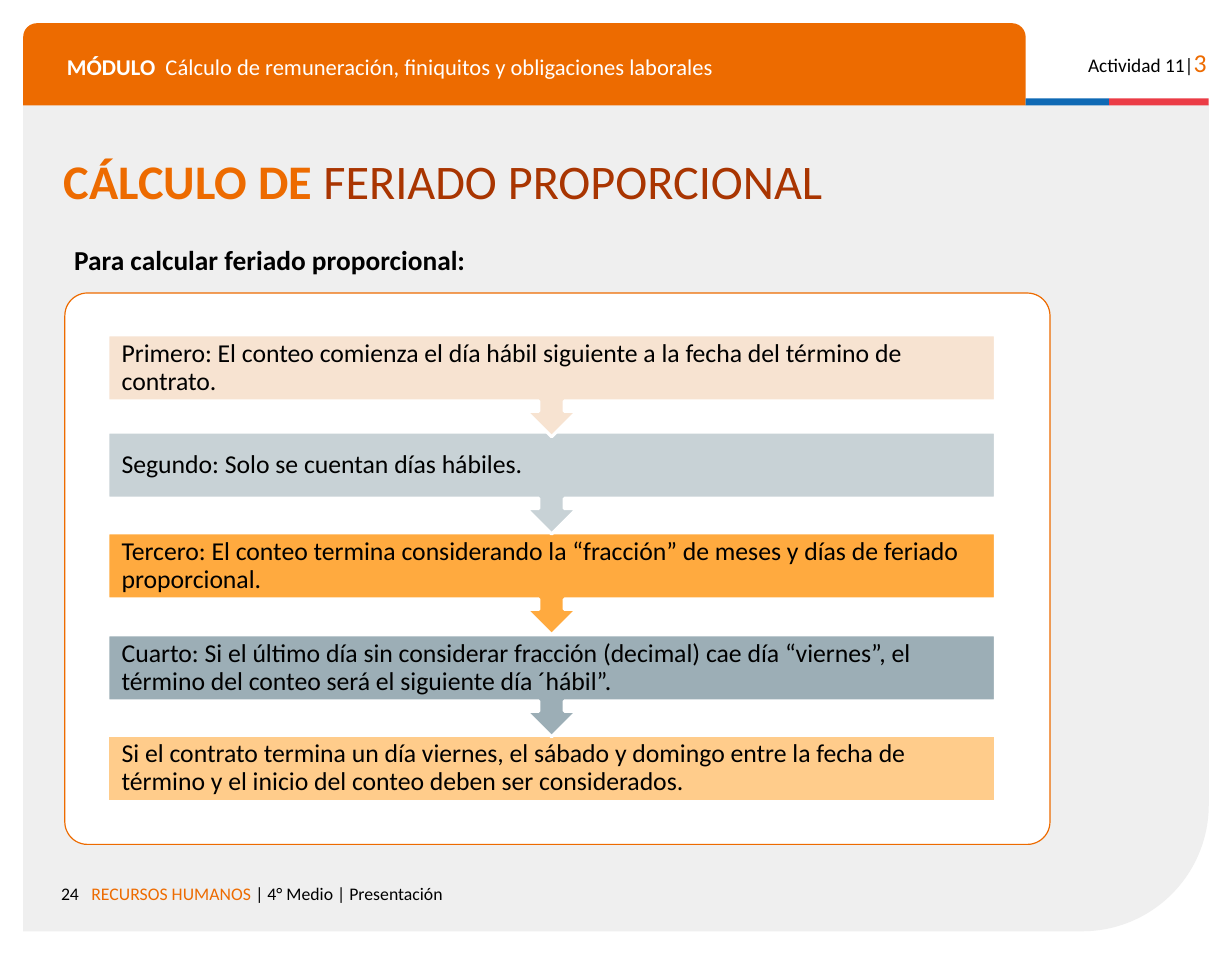
import dataclasses

import pptx
import pptx.dml.color
import pptx.enum.shapes
import pptx.enum.text
import pptx.oxml
import pptx.oxml.ns
import pptx.util

SHAPE = pptx.enum.shapes.MSO_SHAPE
ALIGN = pptx.enum.text.PP_ALIGN
ANCHOR = pptx.enum.text.MSO_ANCHOR
PX = 9144  # 100 px to the inch


@dataclasses.dataclass(frozen=True)
class Theme:
    font: str = "Calibri"
    orange: str = "ED6B00"
    rust: str = "A93501"
    blue: str = "0F69B4"
    red: str = "EB3C46"
    grey: str = "EFEFEF"
    white: str = "FFFFFF"
    black: str = "000000"
    peach: str = "F7E3D1"
    mist: str = "C8D2D6"
    amber: str = "FFAA3F"
    slate: str = "78909C"
    apricot: str = "FFCC8B"
    title: int = 30
    lead: int = 17
    body: int = 16
    module: int = 14
    activity: int = 12
    footer: int = 11


THEME = Theme()


def px(length):
    return pptx.util.Emu(length * PX)


def rgb(colour):
    return pptx.dml.color.RGBColor.from_string(colour)


def set_formats(target, formats):
    for name, value in formats.items():
        setattr(target, name, value)


def write(shape, spans, size, margins=(10, 10), align=ALIGN.LEFT,
          anchor=ANCHOR.TOP, spacing=1.0):
    """Fill a shape with one paragraph of (text, colour, formats) spans."""
    across, down = (px(margin) for margin in margins)
    frame = shape.text_frame
    set_formats(frame, {
        "word_wrap": True, "vertical_anchor": anchor,
        "margin_left": across, "margin_right": across,
        "margin_top": down, "margin_bottom": down,
    })
    para = frame.paragraphs[0]
    set_formats(para, {"alignment": align, "line_spacing": spacing})
    for text, colour, formats in spans:
        span = para.add_run()
        span.text = text
        set_formats(span.font, {
            "name": THEME.font, "size": pptx.util.Pt(size), "bold": False, **formats})
        span.font.color.rgb = rgb(colour)
    return para


def add_text(page, place, spans, size, **layout):
    box = page.shapes.add_textbox(*map(px, place))
    return write(box, spans, size, **layout)


def add_panel(page, kind, place, fill, line=None, width=1, adjust=()):
    panel = page.shapes.add_shape(kind, *map(px, place))
    panel.shadow.inherit = False
    panel.fill.solid()
    panel.fill.fore_color.rgb = rgb(fill)
    if line:
        panel.line.color.rgb = rgb(line)
        panel.line.width = pptx.util.Pt(width)
    else:
        panel.line.fill.background()
    for index, value in enumerate(adjust):
        panel.adjustments[index] = value
    return panel


def add_tab_stop(para, position):
    stops = pptx.oxml.parse_xml(
        f'<a:tabLst {pptx.oxml.ns.nsdecls("a")}>'
        f'<a:tab pos="{px(position)}" algn="l"/></a:tabLst>')
    para._p.get_or_add_pPr().append(stops)


def set_opacity(panel, percent):
    colour = panel.element.spPr.find(".//" + pptx.oxml.ns.qn("a:srgbClr"))
    colour.append(pptx.oxml.parse_xml(
        f'<a:alpha {pptx.oxml.ns.nsdecls("a")} val="{percent * 1000}"/>'))


def add_step(page, top, text, fill, opacity, is_last):
    kind = SHAPE.RECTANGLE if is_last else SHAPE.DOWN_ARROW_CALLOUT
    height = 57 if is_last else 88
    adjust = () if is_last else (0.25, 0.25, 0.25, 0.65)
    step = add_panel(page, kind, (93, top, 766, height), fill, THEME.white, 2, adjust)
    if opacity < 100:
        set_opacity(step, opacity)
    write(step, [(text, THEME.black, {})], THEME.body, margins=(12, 0),
          anchor=ANCHOR.MIDDLE, spacing=0.9)


def add_frame(page):
    # Backdrop with its lower right corner rounded
    backdrop = add_panel(page, SHAPE.ROUND_1_RECTANGLE, (20, 90, 1023, 714),
                         THEME.grey, adjust=(0.153,))
    backdrop.element.spPr.get_or_add_xfrm().set("flipV", "1")

    # Header band and flag stripe
    add_panel(page, SHAPE.ROUND_2_SAME_RECTANGLE, (20, 20, 865, 71),
              THEME.orange, adjust=(0.167, 0))
    add_panel(page, SHAPE.RECTANGLE, (885, 85, 72, 6), THEME.blue)
    add_panel(page, SHAPE.RECTANGLE, (957, 85, 86, 6), THEME.red)
    module = add_text(page, (48, 38, 814, 35), [
        ("MÓDULO\t", THEME.white, {"bold": True}),
        ("Cálculo de remuneración, finiquitos y obligaciones laborales", THEME.white, {}),
    ], THEME.module, spacing=0.9)
    add_tab_stop(module, 85)
    add_text(page, (923, 30, 128, 38), [
        ("Actividad 11|", THEME.black, {}),
        ("3", THEME.orange, {"size": pptx.util.Pt(THEME.body)}),
    ], THEME.activity, align=ALIGN.RIGHT)

    # Footer
    add_text(page, (20, 753, 58, 29), [("24", THEME.black, {})],
             THEME.footer, align=ALIGN.RIGHT)
    add_text(page, (69, 753, 714, 38), [
        ("RECURSOS HUMANOS ", THEME.orange, {}),
        ("| 4° Medio | Presentación", THEME.black, {}),
    ], THEME.footer)


def add_steps(page):
    steps = [
        (289, "Primero: El conteo comienza el día hábil siguiente a la fecha del "
              "término de contrato.", THEME.peach, 100),
        (373, "Segundo: Solo se cuentan días hábiles.", THEME.mist, 100),
        (460, "Tercero: El conteo termina considerando la “fracción” de meses y días "
              "de feriado proporcional.", THEME.amber, 100),
        (548, "Cuarto: Si el último día sin considerar fracción (decimal) cae día "
              "“viernes”, el término del conteo será el siguiente día ´hábil”.",
         THEME.slate, 73),
        (635, "Si el contrato termina un día viernes, el sábado y domingo entre la "
              "fecha de término y el inicio del conteo deben ser considerados.",
         THEME.apricot, 100),
    ]
    # Each arrow tip lies over the step below it
    for step in reversed(steps):
        add_step(page, *step, is_last=step is steps[-1])


def main():
    deck = pptx.Presentation()
    set_formats(deck, {"slide_width": px(1063), "slide_height": px(827)})
    page = deck.slides.add_slide(deck.slide_layouts[6])
    add_frame(page)

    # Title and lead
    add_text(page, (45, 126, 1018, 61), [
        ("CÁLCULO DE ", THEME.orange, {"bold": True}),
        ("FERIADO PROPORCIONAL", THEME.rust, {}),
    ], THEME.title, margins=(10, 5))
    add_text(page, (54, 205, 818, 39), [
        ("Para calcular feriado proporcional:", THEME.black, {"bold": True}),
    ], THEME.lead, margins=(10, 5))

    # Card with the steps
    add_panel(page, SHAPE.ROUNDED_RECTANGLE, (56, 253, 850, 476),
              THEME.white, THEME.orange, 0.75, (0.041,))
    add_steps(page)
    deck.save("out.pptx")


if __name__ == "__main__":
    main()
